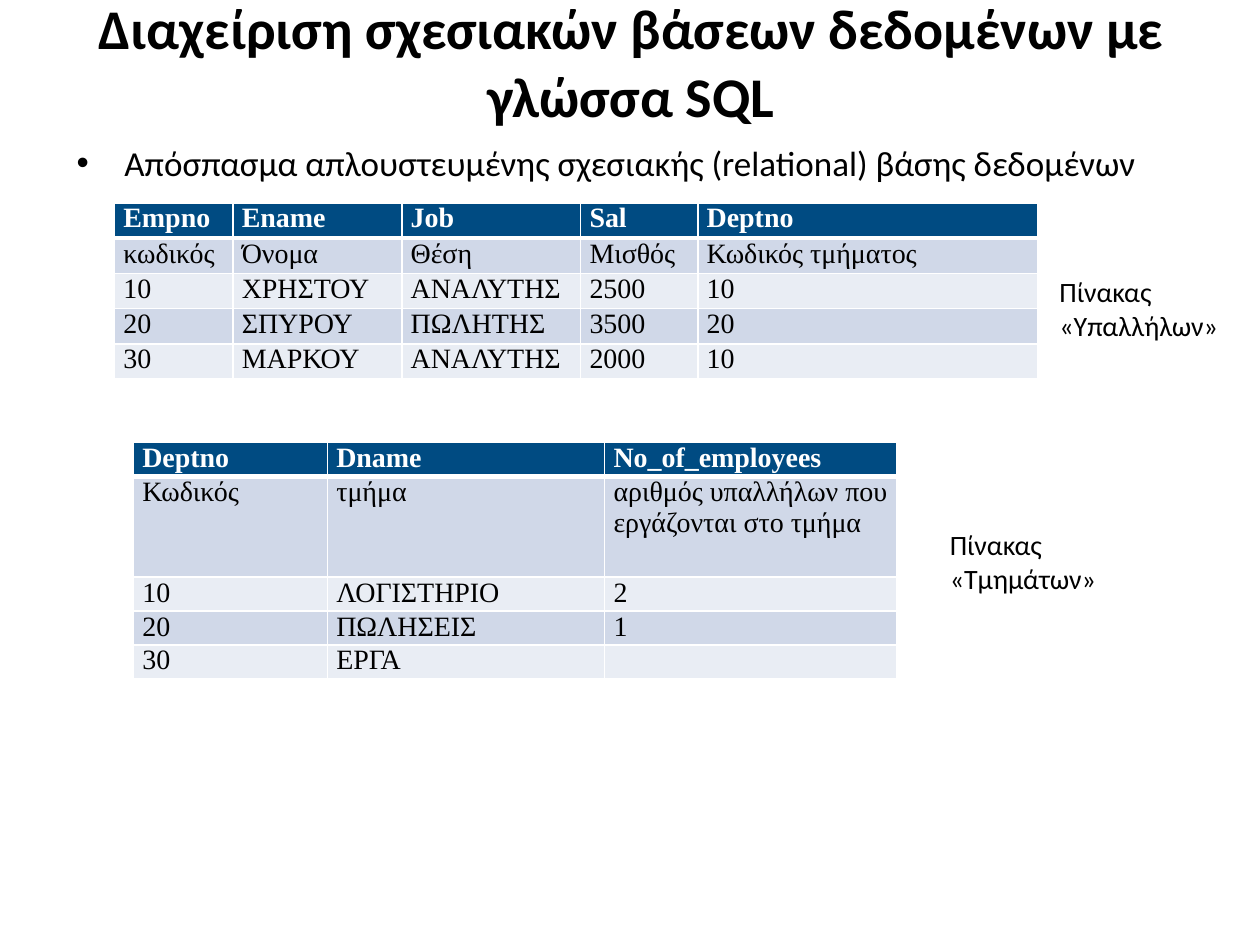
from lxml import etree
from pptx import Presentation
from pptx.dml.color import RGBColor
from pptx.enum.text import MSO_ANCHOR, MSO_AUTO_SIZE, PP_ALIGN
from pptx.oxml.ns import qn
from pptx.util import Inches, Pt

MIDDLE = MSO_ANCHOR.MIDDLE
NO_FIT = MSO_AUTO_SIZE.NONE
LEFT, CENTER, JUSTIFY = PP_ALIGN.LEFT, PP_ALIGN.CENTER, PP_ALIGN.JUSTIFY

COLORS = {"text": "000000", "white": "FFFFFF", "header": "004B82",
          "band_dark": "D0D8E8", "band_light": "E9EDF4"}
BODY_FONT, TABLE_FONT = "Calibri", "Times New Roman"

# Content
TITLE = "Διαχείριση σχεσιακών βάσεων δεδομένων με γλώσσα SQL"
BULLET = "Απόσπασμα απλουστευμένης σχεσιακής (relational) βάσης δεδομένων"
LABELS = [
    ("Πίνακας «Υπαλλήλων»", (8.31, 2.13, 1.69, 0.64)),
    ("Πίνακας «Τμημάτων»", (7.44, 4.14, 1.55, 0.64)),
]
DEPARTMENTS = {
    "corner": (1.06, 3.51),
    "widths": [1.54, 2.2, 2.32],
    "heights": [0.27, 0.8, 0.27, 0.27, 0.27],
    "rows": [
        ["Deptno", "Dname", "No_of_employees"],
        ["Κωδικός", "τμήμα", "αριθμός υπαλλήλων που εργάζονται στο τμήμα"],
        ["10", "ΛΟΓΙΣΤΗΡΙΟ", "2"],
        ["20", "ΠΩΛΗΣΕΙΣ", "1"],
        ["30", "ΕΡΓΑ", ""],
    ],
}
EMPLOYEES = {
    "corner": (0.91, 1.61),
    "widths": [0.94, 1.34, 1.42, 0.93, 2.7],
    "heights": [0.28] * 5,
    "rows": [
        ["Empno", "Ename", "Job", "Sal", "Deptno"],
        ["κωδικός", "Όνομα", "Θέση", "Μισθός", "Κωδικός τμήματος"],
        ["10", "ΧΡΗΣΤΟΥ", "ΑΝΑΛΥΤΗΣ", "2500", "10"],
        ["20", "ΣΠΥΡΟΥ", "ΠΩΛΗΤΗΣ", "3500", "20"],
        ["30", "ΜΑΡΚΟΥ", "ΑΝΑΛΥΤΗΣ", "2000", "10"],
    ],
}


def write_text(frame, text, size=16, font=BODY_FONT, color="text", bold=False,
               align=LEFT):
    frame.word_wrap = True
    para = frame.paragraphs[0]
    para.alignment = align
    if not text:
        # An empty cell keeps the text size so its row does not grow
        end = etree.SubElement(para._p, qn("a:endParaRPr"))
        end.set("sz", str(size * 100))
        return para
    span = para.add_run()
    span.text = text
    span.font.size = Pt(size)
    span.font.name = font
    span.font.bold = bold
    span.font.color.rgb = RGBColor.from_string(COLORS[color])
    return para


def add_text_box(page, area, text, **text_format):
    box = page.shapes.add_textbox(*map(Inches, area))
    return write_text(box.text_frame, text, **text_format)


def add_bullet(para, indent):
    properties = para._p.get_or_add_pPr()
    properties.set("marL", str(Inches(indent)))
    properties.set("indent", str(-Inches(indent)))
    etree.SubElement(properties, qn("a:buFont")).set("typeface", "Arial")
    etree.SubElement(properties, qn("a:buChar")).set("char", "•")


def set_borders(cell, widths):
    properties = cell._tc.get_or_add_tcPr()
    for position, (side, width) in enumerate(widths.items()):
        line = etree.Element(qn(f"a:ln{side}"), w=str(Pt(width)))
        fill = etree.SubElement(line, qn("a:solidFill"))
        etree.SubElement(fill, qn("a:srgbClr")).set("val", COLORS["white"])
        properties.insert(position, line)


def add_data_table(page, content):
    rows, widths, heights = content["rows"], content["widths"], content["heights"]
    area = (*content["corner"], sum(widths), sum(heights))
    table = page.shapes.add_table(len(rows), len(widths), *map(Inches, area)).table
    for column, width in zip(table.columns, widths):
        column.width = Inches(width)
    for row, height in zip(table.rows, heights):
        row.height = Inches(height)

    for r, values in enumerate(rows):
        header = r == 0
        fill = "header" if header else "band_dark" if r % 2 else "band_light"
        borders = {"L": 1, "R": 1, "T": 3 if r == 1 else 1, "B": 3 if header else 1}
        for c, text in enumerate(values):
            cell = table.cell(r, c)
            cell.margin_left = cell.margin_right = Inches(0.07)
            cell.margin_top = cell.margin_bottom = 0
            cell.fill.solid()
            cell.fill.fore_color.rgb = RGBColor.from_string(COLORS[fill])
            set_borders(cell, borders)
            write_text(cell.text_frame, text, font=TABLE_FONT, bold=header,
                       color="white" if header else "text")


def main():
    deck = Presentation()
    deck.slide_width, deck.slide_height = Inches(10), Inches(7.5)
    page = deck.slides.add_slide(deck.slide_layouts[5])

    # Title
    title = page.shapes.title
    title.left, title.top, title.width, title.height = map(
        Inches, (0.51, 0.13, 9, 0.71))
    title.text_frame.auto_size = NO_FIT
    title.text_frame.vertical_anchor = MIDDLE
    write_text(title.text_frame, TITLE, size=32, bold=True, align=CENTER)

    # Bullet line and table labels
    bullet = add_text_box(page, (0.51, 1.07, 9, 0.47), BULLET, size=20, align=JUSTIFY)
    add_bullet(bullet, 0.38)
    for text, area in LABELS:
        add_text_box(page, area, text)

    # Tables
    for content in (DEPARTMENTS, EMPLOYEES):
        add_data_table(page, content)

    deck.save("out.pptx")


if __name__ == "__main__":
    main()
